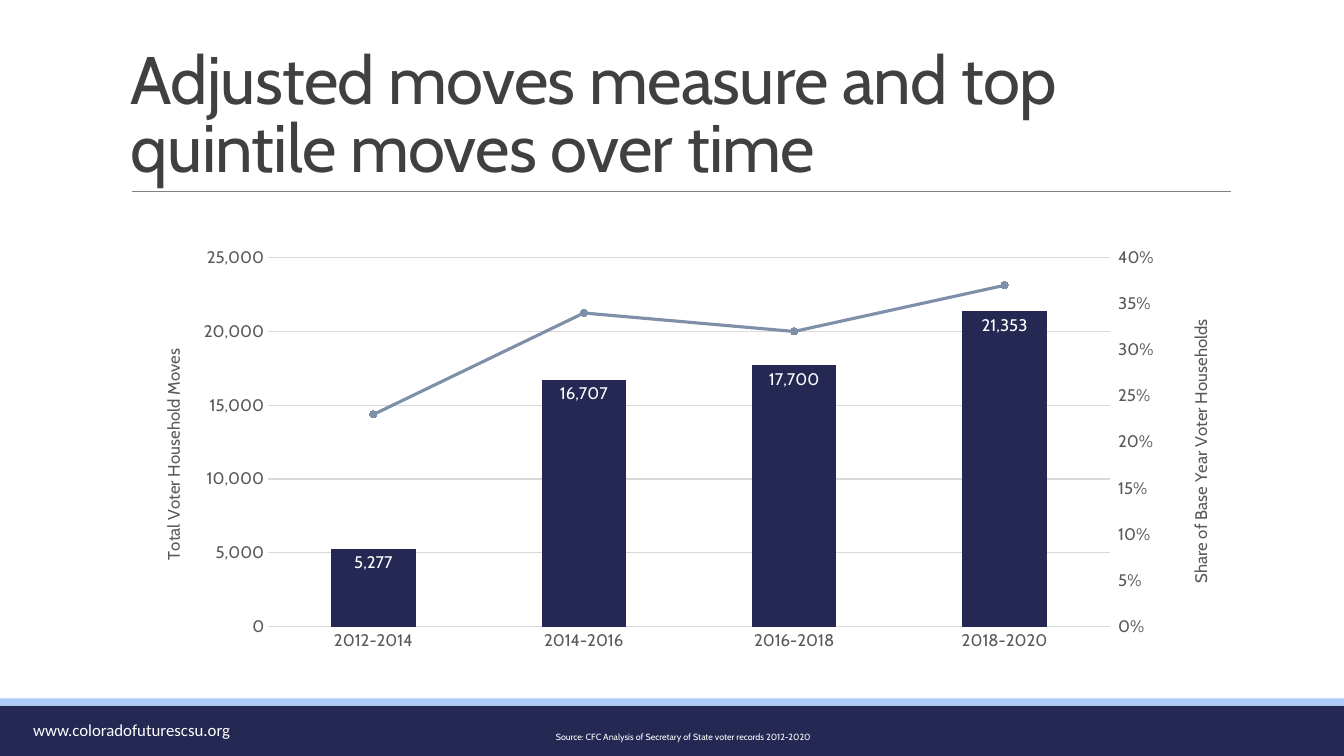
from pptx import Presentation
from pptx import util as u
from pptx import oxml
from pptx.chart import axis, data
from pptx.dml import color
from pptx.enum import chart as kinds
from pptx.enum import shapes, text
from pptx.oxml import ns

NAVY, SKY, SLATE = "242852", "ACCBF9", "7F8FA9"
WHITE, DARK, GREY, PALE = "FFFFFF", "404040", "595959", "D9D9D9"


def rgb(code):
    return color.RGBColor.from_string(code)


def node(tag, body="", attrs=""):
    names = ns.nsdecls("c", "a")
    return oxml.parse_xml(f"<{tag} {names} {attrs}>{body}</{tag}>")


def layout(**parts):
    body = "".join(f'<c:{key} val="{val}"/>' for key, val in parts.items())
    return node("c:manualLayout", body)


class Deck:
    font = "Cabin"

    def __init__(self):
        self.prs = Presentation()
        self.prs.slide_width = u.Inches(13.33)
        self.prs.slide_height = u.Inches(7.5)
        self.slide = self.prs.slides.add_slide(self.prs.slide_layouts[6])

    def band(self, top, height, fill):
        box = self.slide.shapes.add_shape(
            shapes.MSO_SHAPE.RECTANGLE, 0, u.Inches(top),
            self.prs.slide_width, u.Inches(height))
        box.shadow.inherit = False
        box.fill.solid()
        box.fill.fore_color.rgb = rgb(fill)
        box.line.fill.background()

    def rule(self, left, right, top):
        line = self.slide.shapes.add_connector(
            shapes.MSO_CONNECTOR.STRAIGHT, u.Inches(left), u.Inches(top),
            u.Inches(right), u.Inches(top))
        line.line.color.rgb = rgb("808080")
        line.line.width = u.Pt(0.5)
        line.element.spPr.append(node("a:effectLst"))

    def style(self, font, size, tint, face=None):
        font.size = u.Pt(size)
        font.name = face or self.font
        font.color.rgb = rgb(tint)

    def label(self, words, at, size, tint, face=None, align=None,
              anchor=text.MSO_ANCHOR.TOP, space=None, **extra):
        box = self.slide.shapes.add_textbox(*map(u.Inches, at))
        frame = box.text_frame
        frame.word_wrap = True
        frame.vertical_anchor = anchor
        para = frame.paragraphs[0]
        para.alignment = align
        para.line_spacing = space
        run = para.add_run()
        run.text = words
        self.style(run.font, size, tint, face)
        for key, val in extra.items():
            run.font._element.set(key, val)

    def scale(self, ax, title, top, step, form, x, y):
        ax.minimum_scale, ax.maximum_scale, ax.major_unit = 0, top, step
        ax.major_tick_mark = kinds.XL_TICK_MARK.NONE
        ax.tick_labels.number_format = form
        ax.tick_labels.number_format_is_linked = False
        self.style(ax.tick_labels.font, 12, GREY)
        ax.format.line.fill.background()
        frame = ax.axis_title.text_frame
        run = frame.paragraphs[0].add_run()
        run.text = title
        self.style(run.font, 12, GREY)
        run.font.bold = False
        head = ax.axis_title.element
        head.xpath(".//a:bodyPr")[0].set("rot", "-5400000")
        head.xpath("c:layout")[0].append(
            layout(xMode="edge", yMode="edge", x=x, y=y))

    def combo(self, at, cats, moves, share):
        book = data.CategoryChartData()
        book.categories = cats
        book.add_series("Series 1", moves, "#,##0")
        book.add_series("Series 2", share, "0%")
        chart = self.slide.shapes.add_chart(
            kinds.XL_CHART_TYPE.COLUMN_CLUSTERED, *map(u.Inches, at),
            book).chart
        chart.has_legend = chart.has_title = False
        self.style(chart.font, 12, GREY)
        base, left = chart.category_axis, chart.value_axis
        base.major_tick_mark = kinds.XL_TICK_MARK.NONE
        self.style(base.tick_labels.font, 12, GREY)
        left.has_major_gridlines = True
        for part in (base, left.major_gridlines):
            part.format.line.color.rgb = rgb(PALE)
            part.format.line.width = u.Pt(0.75)
        self.scale(left, "Total Voter Household Moves", 25000, 5000,
                   "#,##0", 0.02, 0.25)

        right = self.second(chart)
        self.scale(right, "Share of Base Year Voter Households", 0.4, 0.05,
                   "0%", 0.96, 0.18)

        bars, trend = chart.plots
        bars.vary_by_categories = False
        bars.gap_width = 150
        fill = bars.series[0].format.fill
        fill.solid()
        fill.fore_color.rgb = rgb(NAVY)
        bars.has_data_labels = True
        tags = bars.data_labels
        tags.show_value = True
        tags.position = kinds.XL_LABEL_POSITION.INSIDE_END
        tags.number_format = "#,##0"
        tags.number_format_is_linked = False
        self.style(tags.font, 12, WHITE)

        line = trend.series[0]
        line.smooth = False
        line.format.line.color.rgb = rgb(SLATE)
        line.format.line.width = u.Pt(2.25)
        dot = line.marker
        dot.style = kinds.XL_MARKER_STYLE.CIRCLE
        dot.size = 5
        dot.format.fill.solid()
        dot.format.fill.fore_color.rgb = rgb(SLATE)
        dot.format.line.color.rgb = rgb(SLATE)

    def second(self, chart):
        area = chart.element.xpath(".//c:plotArea")[0]
        for old in area.xpath("c:layout"):
            area.remove(old)
        frame = node("c:layout")
        frame.append(layout(layoutTarget="inner", xMode="edge", yMode="edge",
                            x=0.12, y=0.04, w=0.77, h=0.88))
        area.insert(0, frame)
        bars = area.xpath("c:barChart")[0]
        ser = bars.xpath("c:ser")[1]
        for flag in ser.xpath("c:invertIfNegative"):
            ser.remove(flag)
        trend = node("c:lineChart", '<c:grouping val="standard"/>'
                     '<c:varyColors val="0"/><c:marker val="1"/>'
                     '<c:axId val="301"/><c:axId val="302"/>')
        trend.insert(2, ser)
        bars.addnext(trend)
        head = ('<c:axId val="{}"/><c:scaling><c:orientation val="minMax"/>'
                '</c:scaling><c:delete val="{}"/><c:axPos val="{}"/>')
        tail = ('<c:tickLblPos val="nextTo"/><c:crossAx val="{}"/>'
                '<c:crosses val="{}"/>')
        value = node("c:valAx", head.format(302, 0, "r")
                     + tail.format(301, "max"))
        hidden = node("c:catAx", head.format(301, 1, "b")
                      + tail.format(302, "autoZero"))
        area.xpath("c:valAx")[-1].addnext(value)
        value.addnext(hidden)
        return axis.ValueAxis(value)


def main():
    deck = Deck()
    deck.band(7, 0.5, NAVY)
    deck.band(6.93, 0.07, SKY)
    deck.rule(1.31, 12.21, 1.9)
    deck.label("www.coloradofuturescsu.org", (0.23, 7.09, 3.39, 0.3),
               12, WHITE, face="Calibri")
    deck.label("Adjusted moves measure and top quintile moves over time",
               (1.2, 0.31, 11, 1.59), 48, DARK,
               anchor=text.MSO_ANCHOR.BOTTOM, space=0.85, spc="-50")
    deck.label("Source: CFC Analysis of Secretary of State voter records "
               "2012-2020", (2.82, 7.19, 7.91, 0.22), 11, WHITE,
               align=text.PP_ALIGN.CENTER, baseline="30000")
    cats = [f"{year}-{year + 2}" for year in range(2012, 2020, 2)]
    deck.combo((1.36, 2.39, 10.84, 4.16), cats,
               (5277, 16707, 17700, 21353), (0.23, 0.34, 0.32, 0.37))
    deck.prs.save("out.pptx")


if __name__ == "__main__":
    main()
